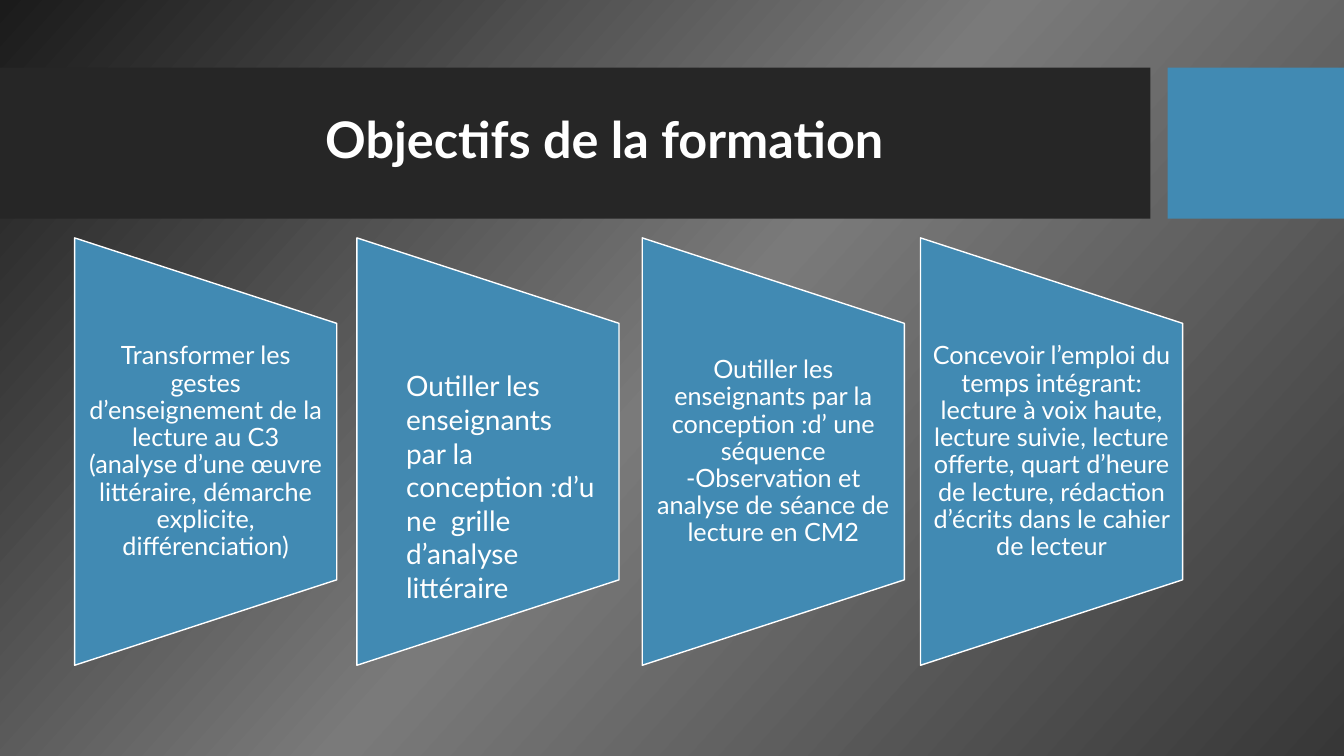
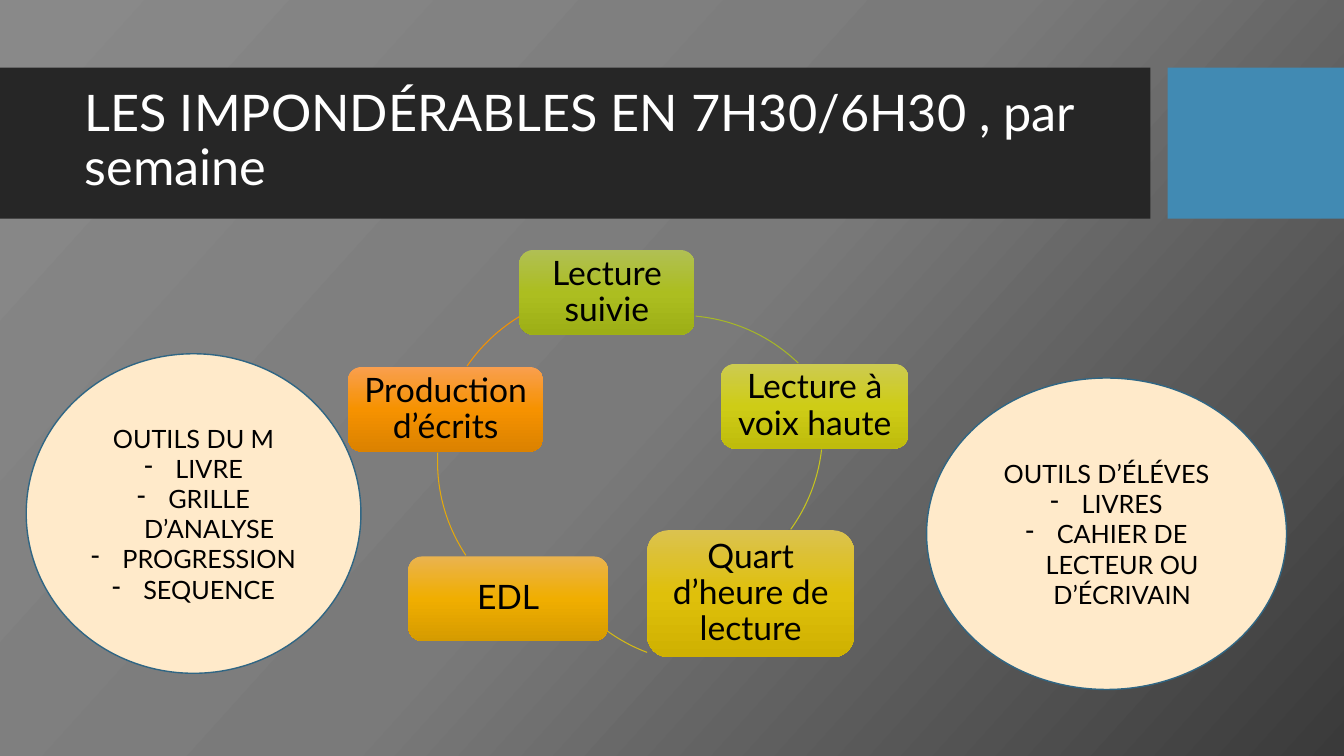
import copy
import math
from dataclasses import dataclass
from typing import Any

import pptx
import pptx.dml.color
import pptx.enum.shapes
import pptx.enum.text
import pptx.util
from lxml import etree
from pptx.oxml.ns import qn

Inches = pptx.util.Inches
Pt = pptx.util.Pt
SHAPE = pptx.enum.shapes.MSO_SHAPE
ALIGN = pptx.enum.text.PP_ALIGN
ANCHOR = pptx.enum.text.MSO_ANCHOR
AUTO_SIZE = pptx.enum.text.MSO_AUTO_SIZE

FONT = "Lato"
WHITE, BLACK = "FFFFFF", "000000"
BLUE, DARK_BLUE, CHARCOAL, CREAM = "418AB3", "306684", "262626", "FFEACA"
BACKGROUND_ANGLE = 42

CARD_WIDTH, CARD_HEIGHT, CARD_TOP = 2.6, 4.24, 2.36
CYCLE_DIAMETER = 3.36
BULLET_INDENT = 0.31

CARD_FRAME = {
    "margin_left": Inches(0.12), "margin_right": Inches(0.12),
    "margin_top": 0, "margin_bottom": 0,
    "vertical_anchor": ANCHOR.MIDDLE,
}
NODE_FRAME = {
    "margin_left": Inches(0.1), "margin_right": Inches(0.1),
    "margin_top": Inches(0.1), "margin_bottom": Inches(0.1),
    "vertical_anchor": ANCHOR.MIDDLE,
}
MIDDLE_FRAME = {"vertical_anchor": ANCHOR.MIDDLE}
TOP_FRAME = {"vertical_anchor": ANCHOR.TOP, "auto_size": AUTO_SIZE.SHAPE_TO_FIT_TEXT}
TIGHT_CENTER = {"alignment": ALIGN.CENTER, "line_spacing": 0.9}
TIGHT_LEFT = {"alignment": ALIGN.LEFT, "line_spacing": 0.9}
CENTER = {"alignment": ALIGN.CENTER}
LEFT = {"alignment": ALIGN.LEFT}


@dataclass(frozen=True)
class Box:
    left: float
    top: float
    width: float
    height: float

    def lengths(self) -> tuple:
        return tuple(Inches(v) for v in (self.left, self.top, self.width, self.height))


@dataclass(frozen=True)
class Card:
    left: float
    text: str
    text_box: Box
    size: int
    frame: dict
    para: dict


@dataclass(frozen=True)
class Node:
    text: str
    box: Box
    stops: tuple


@dataclass(frozen=True)
class Arc:
    left: float
    top: float
    start: tuple
    end: tuple
    color: str


@dataclass(frozen=True)
class ToolSet:
    box: Box
    heading: str
    items: tuple


BANDS = (
    (Box(0, 0.67, 11.41, 1.5), CHARCOAL),
    (Box(11.58, 0.67, 1.75, 1.5), BLUE),
)
TITLE_BOX = Box(0.74, 0.82, 10.51, 1.18)


def centered_card(left: float, text: str) -> Card:
    box = Box(left, 3.21, CARD_WIDTH, 2.55)
    return Card(left, text, box, 18, CARD_FRAME, TIGHT_CENTER)


CARDS = (
    centered_card(0.74, "Transformer les gestes d’enseignement de la lecture au C3 "
                        "(analyse d’une œuvre littéraire, démarche explicite, différenciation)"),
    Card(3.54, "Outiller les enseignants par la conception :d’une  grille d’analyse littéraire",
         Box(3.93, 3.61, 2.09, 2.46), 20, TOP_FRAME, LEFT),
    centered_card(6.37, "Outiller les enseignants par la conception :d’ une séquence "
                        "-Observation et analyse de séance de lecture en CM2"),
    centered_card(9.13, "Concevoir l’emploi du temps intégrant: lecture à voix haute, "
                        "lecture suivie, lecture offerte, quart d’heure de lecture, "
                        "rédaction d’écrits dans le cahier de lecteur"),
)

NODES = (
    Node("Lecture suivie", Box(5.15, 2.48, 1.74, 0.84), ("B0BF54", "ACBE20", "9DAF16")),
    Node("Lecture à voix haute", Box(7.15, 3.61, 1.86, 0.84), ("CDCB51", "CECC16", "BFBC0C")),
    Node("Quart d’heure de lecture", Box(6.42, 5.26, 2.05, 1.26), ("DBC24F", "DFC00B", "CFB101")),
    Node("EDL", Box(4.05, 5.52, 1.98, 0.84), ("EAB34F", "F0AE00", "D59B00")),
    Node("Production d’écrits", Box(3.45, 3.64, 1.94, 0.84), ("F99F4F", "F69200", "DB8200")),
)

ARCS = (
    Arc(5.07, 3.13, (6.9, 3.14), (7.91, 3.61), "A6B727"),
    Arc(4.8, 2.59, (8.15, 4.46), (7.84, 5.25), "C6C41E"),
    Arc(5.33, 3.22, (6.42, 6.47), (6.02, 6.26), "D5BA15"),
    Arc(4.34, 2.9, (4.62, 5.51), (4.34, 4.49), "E5A90B"),
    Arc(4.34, 2.9, (4.63, 3.63), (5.15, 3.14), "F69200"),
)

TOOL_SETS = (
    ToolSet(Box(9.19, 3.75, 3.57, 3.09), "OUTILS D’ÉLÉVES",
            ("LIVRES", "CAHIER DE LECTEUR OU D’ÉCRIVAIN")),
    ToolSet(Box(0.26, 3.51, 3.32, 3.17), "OUTILS DU M",
            ("LIVRE", "GRILLE D’ANALYSE", "PROGRESSION", "SEQUENCE")),
)


def rgb(color: str) -> pptx.dml.color.RGBColor:
    return pptx.dml.color.RGBColor.from_string(color)


def apply(target: Any, fmt: dict) -> None:
    for name, value in fmt.items():
        setattr(target, name, value)


def set_gradient(fill: Any, element: Any, colors: tuple, angle: float) -> None:
    fill.gradient()
    fill.gradient_angle = 360 - angle
    stop_list = element.xpath(".//a:gsLst")[0]
    stop_list.append(copy.deepcopy(stop_list[-1]))
    for i, (stop, color) in enumerate(zip(fill.gradient_stops, colors)):
        stop.color.rgb = rgb(color)
        stop.position = i / (len(colors) - 1)


def add_text(p: Any, text: str, size: int, color: str, para: dict, bold: bool = False) -> None:
    apply(p, para)
    r = p.add_run()
    r.text = text
    apply(r.font, {"name": FONT, "size": Pt(size), "bold": bold})
    r.font.color.rgb = rgb(color)


def set_bullet(p: Any) -> None:
    pPr = p._p.get_or_add_pPr()
    pPr.set("marL", str(Inches(BULLET_INDENT)))
    pPr.set("indent", str(-Inches(BULLET_INDENT)))
    etree.SubElement(pPr, qn("a:buChar")).set("char", "-")


def set_frame(sp: Any, frame: dict) -> Any:
    tf = sp.text_frame
    apply(tf, {"word_wrap": True, **frame})
    return tf


def add_shape(s: Any, kind: Any, box: Box, fill: str = "", line: str = "", width: float = 1) -> Any:
    sp = s.shapes.add_shape(kind, *box.lengths())
    sp.shadow.inherit = False
    if fill:
        sp.fill.solid()
        sp.fill.fore_color.rgb = rgb(fill)
    else:
        sp.fill.background()
    if line:
        sp.line.color.rgb = rgb(line)
        sp.line.width = Pt(width)
    else:
        sp.line.fill.background()
    return sp


def add_slide(prs: Any, title: str, background: tuple, para: dict, bold: bool = False) -> Any:
    s = prs.slides.add_slide(prs.slide_layouts.get_by_name("Title Only"))
    set_gradient(s.background.fill, s.element, background, BACKGROUND_ANGLE)
    sp = s.shapes.title
    for box, color in BANDS:
        sp.element.addprevious(add_shape(s, SHAPE.RECTANGLE, box, color).element)
    apply(sp, dict(zip(("left", "top", "width", "height"), TITLE_BOX.lengths())))
    tf = set_frame(sp, {**MIDDLE_FRAME, "auto_size": AUTO_SIZE.NONE})
    add_text(tf.paragraphs[0], title, 36, WHITE, para, bold)
    return s


def draw_card(s: Any, card: Card) -> None:
    shift = (CARD_HEIGHT - CARD_WIDTH) / 2
    box = Box(card.left - shift, CARD_TOP + shift, CARD_HEIGHT, CARD_WIDTH)
    add_shape(s, SHAPE.FLOWCHART_MANUAL_OPERATION, box, BLUE, WHITE).rotation = 270
    tf = set_frame(s.shapes.add_textbox(*card.text_box.lengths()), card.frame)
    add_text(tf.paragraphs[0], card.text, card.size, WHITE, card.para)


def draw_node(s: Any, node: Node) -> None:
    sp = add_shape(s, SHAPE.ROUNDED_RECTANGLE, node.box)
    set_gradient(sp.fill, sp.element, node.stops, 90)
    tf = set_frame(sp, NODE_FRAME)
    add_text(tf.paragraphs[0], node.text, 24, BLACK, TIGHT_CENTER)


def draw_arc(s: Any, arc: Arc) -> None:
    box = Box(arc.left, arc.top, CYCLE_DIAMETER, CYCLE_DIAMETER)
    sp = add_shape(s, SHAPE.ARC, box, line=arc.color, width=0.75)
    radius = CYCLE_DIAMETER / 2
    for i, (x, y) in enumerate((arc.start, arc.end)):
        angle = math.degrees(math.atan2(y - arc.top - radius, x - arc.left - radius)) % 360
        sp.adjustments[i] = angle * 0.6


def draw_tools(s: Any, tools: ToolSet) -> None:
    sp = add_shape(s, SHAPE.OVAL, tools.box, CREAM, DARK_BLUE)
    tf = set_frame(sp, MIDDLE_FRAME)
    add_text(tf.paragraphs[0], tools.heading, 18, BLACK, CENTER)
    for item in tools.items:
        p = tf.add_paragraph()
        set_bullet(p)
        add_text(p, item, 18, BLACK, CENTER)


def build_objectives(prs: Any) -> None:
    s = add_slide(prs, "Objectifs de la formation", ("1B1B1B", "7A7A7A", "373737"),
                  TIGHT_CENTER, bold=True)
    for card in CARDS:
        draw_card(s, card)


def build_weekly_plan(prs: Any) -> None:
    s = add_slide(prs, "LES IMPONDÉRABLES EN 7H30/6H30 , par semaine",
                  ("898989", "7A7A7A", "3A3A3A"), TIGHT_LEFT)
    for node, arc in zip(NODES, ARCS):
        draw_node(s, node)
        draw_arc(s, arc)
    for tools in TOOL_SETS:
        draw_tools(s, tools)


def main() -> None:
    prs = pptx.Presentation()
    apply(prs, {"slide_width": Inches(13.33), "slide_height": Inches(7.5)})
    build_objectives(prs)
    build_weekly_plan(prs)
    prs.save("out.pptx")


if __name__ == "__main__":
    main()
